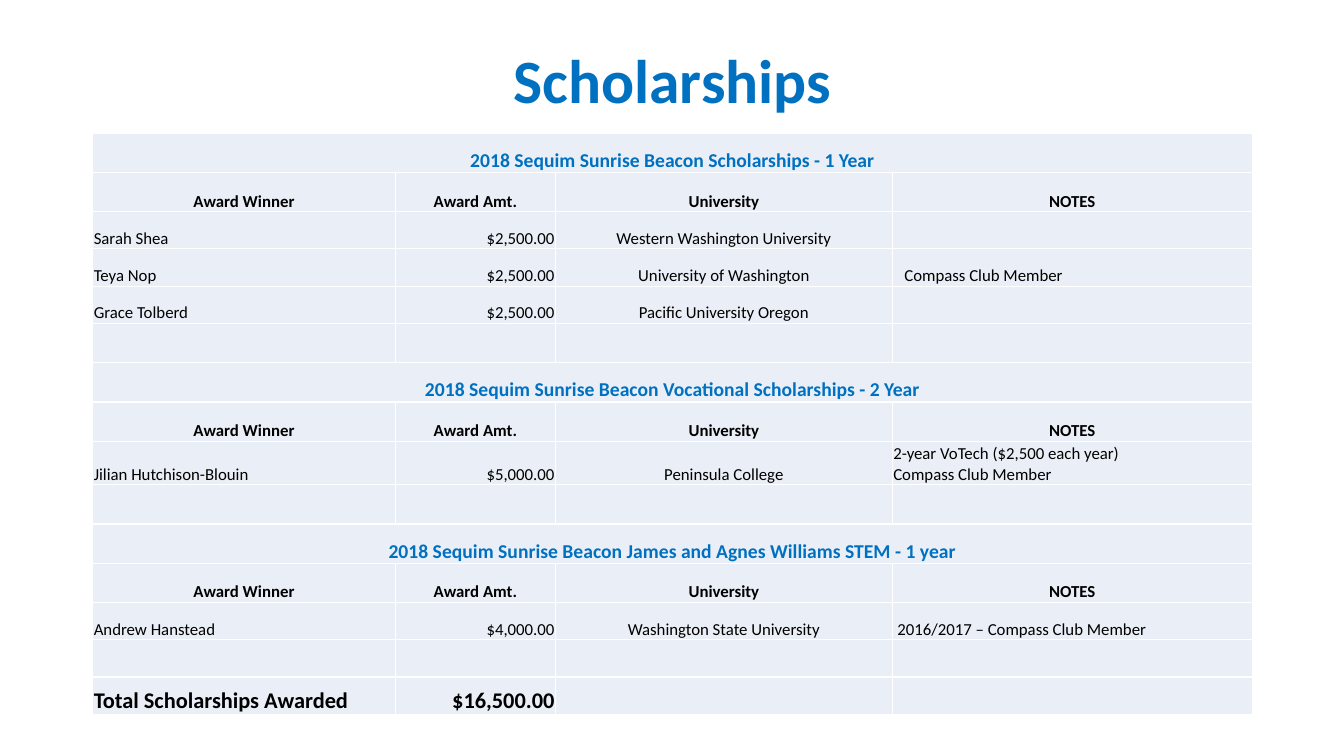
from pptx import Presentation
from pptx.dml.color import RGBColor
from pptx.enum.text import MSO_ANCHOR, PP_ALIGN
from pptx.util import Inches, Pt

BLUE = RGBColor(0x00, 0x70, 0xC0)
BLACK = RGBColor(0x00, 0x00, 0x00)
PALE = RGBColor(0xEA, 0xEF, 0xF7)
LEFT, CENTER, RIGHT = PP_ALIGN.LEFT, PP_ALIGN.CENTER, PP_ALIGN.RIGHT
MIDDLE, BOTTOM = MSO_ANCHOR.MIDDLE, MSO_ANCHOR.BOTTOM
FONT = "Calibri"

COLUMNS = [3, 1.59, 3.34, 3.57]
HEADINGS = ["Award Winner", "Award Amt.", "University", "NOTES"]
AWARD_ALIGN = [LEFT, RIGHT, CENTER, LEFT]
BLANK = [""] * 4

# Each group: heading, awards, height of the blank row that closes it
GROUPS = [
    ("2018 Sequim Sunrise Beacon Scholarships - 1 Year", [
        ["Sarah Shea", "$2,500.00", "Western Washington University", ""],
        ["Teya Nop", "$2,500.00", "University of Washington", "Compass Club Member"],
        ["Grace Tolberd", "$2,500.00", "Pacific University Oregon", ""],
    ], 0.39),
    ("2018 Sequim Sunrise Beacon Vocational Scholarships - 2 Year", [
        ["Jilian Hutchison-Blouin", "$5,000.00", "Peninsula College",
         "2-year VoTech ($2,500 each year)\nCompass Club Member"],
    ], 0.39),
    ("2018 Sequim Sunrise Beacon James and Agnes Williams STEM - 1 year", [
        ["Andrew Hanstead", "$4,000.00", "Washington State University",
         "2016/2017 – Compass Club Member"],
    ], 0.37),
]
TOTAL = ["Total Scholarships Awarded", "$16,500.00", "", ""]
NOTE_INDENTS = {"Compass Club Member": 0.12, "2016/2017 – Compass Club Member": 0.05}


def style(p, size, color, bold, align):
    p.alignment = align
    p.font.name = FONT
    p.font.size = Pt(size)
    p.font.bold = bold
    p.font.color.rgb = color


def add_title(s, text, left, top, width, height):
    title = s.shapes.title
    title.left, title.top = Inches(left), Inches(top)
    title.width, title.height = Inches(width), Inches(height)
    tf = title.text_frame
    tf.text = text
    tf.vertical_anchor = MIDDLE
    p = tf.paragraphs[0]
    style(p, 44, BLUE, True, CENTER)
    p.line_spacing = 0.9


def fill_cell(cell, text, size, color, bold, align):
    cell.fill.solid()
    cell.fill.fore_color.rgb = PALE
    cell.vertical_anchor = BOTTOM
    cell.margin_left = Inches(NOTE_INDENTS.get(text, 0.01))
    cell.margin_right = cell.margin_top = Inches(0.01)
    cell.margin_bottom = 0
    cell.text_frame.text = text
    for p in cell.text_frame.paragraphs:
        style(p, size, color, bold, align)


def table_rows():
    """Yield height, texts, size, colour, bold and alignments of each row."""
    for heading, awards, blank_height in GROUPS:
        yield 0.39, [heading], 14, BLUE, True, [CENTER]
        yield 0.39, HEADINGS, 12, BLACK, True, [CENTER] * 4
        for award in awards:
            height = 0.43 if "\n" in award[3] else 0.37
            yield height, award, 12, BLACK, False, AWARD_ALIGN
        yield blank_height, BLANK, 12, BLACK, False, AWARD_ALIGN
    yield 0.37, TOTAL, 16, BLACK, True, AWARD_ALIGN


def add_awards_table(s, left, top, width, height):
    rows = list(table_rows())
    table = s.shapes.add_table(len(rows), len(COLUMNS), Inches(left), Inches(top),
                               Inches(width), Inches(height)).table
    table.first_row = table.horz_banding = False
    for column, column_width in zip(table.columns, COLUMNS):
        column.width = Inches(column_width)
    for r, (row_height, texts, size, color, bold, aligns) in enumerate(rows):
        table.rows[r].height = Inches(row_height)
        if len(texts) == 1:
            table.cell(r, 0).merge(table.cell(r, len(COLUMNS) - 1))
        for c, (text, align) in enumerate(zip(texts, aligns)):
            fill_cell(table.cell(r, c), text, size, color, bold, align)


def main():
    prs = Presentation()
    prs.slide_width, prs.slide_height = Inches(13.33), Inches(7.5)
    s = prs.slides.add_slide(prs.slide_layouts[5])
    add_title(s, "Scholarships", 0.92, 0.33, 11.5, 0.99)
    add_awards_table(s, 0.92, 1.32, sum(COLUMNS), 5.75)
    prs.save("out.pptx")


if __name__ == "__main__":
    main()
